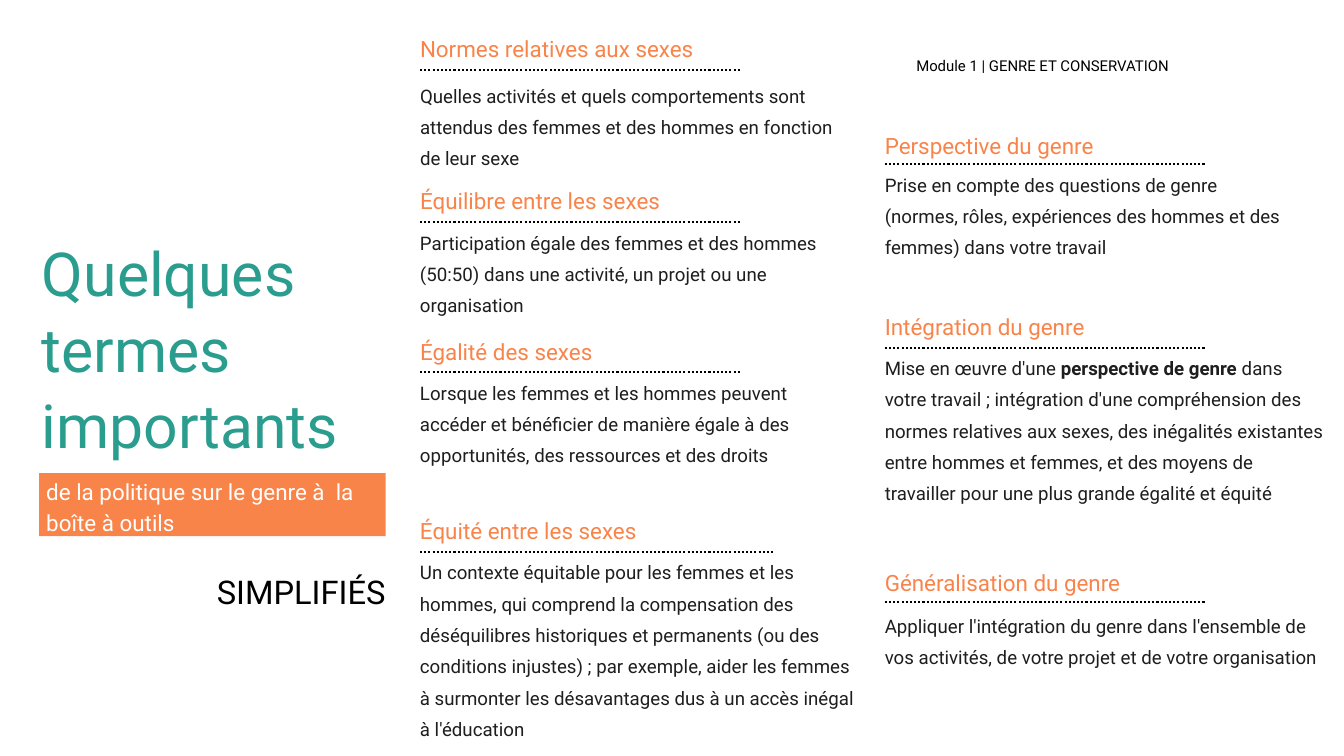
"""Build a slide that defines gender policy terms in two columns."""
from collections import namedtuple
from dataclasses import dataclass

import pptx
import pptx.dml.color
import pptx.enum.dml
import pptx.enum.shapes
import pptx.enum.text
import pptx.oxml.ns
import pptx.util
from lxml import etree

PX = 9525


@dataclass(frozen=True)
class Theme:
    """Hold the colours and type sizes of the slide."""
    font: str = "Roboto"
    teal: str = "2A9D8F"
    coral: str = "F9844A"
    ink: str = "1E1E1E"
    black: str = "000000"
    white: str = "FFFFFF"
    title: int = 65
    tag: int = 35
    head: int = 24
    body: int = 20
    note: int = 16
    rule: float = 2.25
    lead: float = 33.6
    lead_title: float = 81.6
    lead_note: float = 22.4


THEME = Theme()
Term = namedtuple("Term", "name text head head_size rule rule_width body body_size")

COLUMNS = {
    600: [
        Term("Normes relatives aux sexes",
             "Quelles activités et quels comportements sont attendus des femmes "
             "et des hommes en fonction de leur sexe",
             44, (456, 90), 100, 459, 108, (600, 133)),
        Term("Équilibre entre les sexes",
             "Participation égale des femmes et des hommes (50:50) dans une "
             "activité, un projet ou une organisation",
             261, (456, 90), 317, 459, 318, (568, 134)),
        Term("Égalité des sexes",
             "Lorsque les femmes et les hommes peuvent accéder et bénéficier de "
             "manière égale à des opportunités, des ressources et des droits",
             476, (377, 44), 532, 459, 532, (568, 180)),
        Term("Équité entre les sexes",
             "Un contexte équitable pour les femmes et les hommes, qui comprend "
             "la compensation des déséquilibres historiques et permanents (ou des "
             "conditions injustes) ; par exemple, aider les femmes à surmonter "
             "les désavantages dus à un accès inégal à l'éducation",
             732, (414, 44), 788, 505, 789, (624, 271)),
    ],
    1264: [
        Term("Perspective du genre",
             "Prise en compte des questions de genre (normes, rôles, expériences "
             "des hommes et des femmes) dans votre travail",
             183, (377, 44), 234, 459, 235, (568, 133)),
        Term("Intégration du genre",
             "Mise en œuvre d'une *perspective de genre *dans votre travail ; "
             "intégration d'une compréhension des normes relatives aux sexes, des "
             "inégalités existantes entre hommes et femmes, et des moyens de "
             "travailler pour une plus grande égalité et équité",
             441, (377, 44), 497, 459, 497, (632, 271)),
        Term("Généralisation du genre",
             "Appliquer l'intégration du genre dans l'ensemble de vos activités, "
             "de votre projet et de votre organisation",
             807, (568, 44), 860, 459, 865, (624, 133)),
    ],
}


def rgb(code):
    """Turn a hex code into a colour."""
    return pptx.dml.color.RGBColor.from_string(code)


def scale(*sizes):
    """Turn px lengths into EMU."""
    return [size * PX for size in sizes]


def write(shape, text, size, tone, lead=THEME.lead, inset=0, align="LEFT"):
    """Fill a shape with one paragraph, bold between asterisks."""
    frame = shape.text_frame
    frame.word_wrap = True
    frame.auto_size = pptx.enum.text.MSO_AUTO_SIZE.SHAPE_TO_FIT_TEXT
    frame.vertical_anchor = pptx.enum.text.MSO_ANCHOR.TOP
    frame.margin_left = inset * PX
    frame.margin_top = frame.margin_right = frame.margin_bottom = 0
    para = frame.paragraphs[0]
    para.alignment = pptx.enum.text.PP_ALIGN[align]
    para.line_spacing = pptx.util.Pt(lead)
    para.font.name = THEME.font
    para.font.size = pptx.util.Pt(size)
    para.font.color.rgb = rgb(tone)
    for spot, part in enumerate(text.split("*")):
        run = para.add_run()
        run.text = part
        if spot % 2:
            run.font.bold = True


def add_text(slide, box, *args, **style):
    """Add a text box."""
    write(slide.shapes.add_textbox(*scale(*box)), *args, **style)


def add_band(slide, box, text):
    """Add the filled subtitle band."""
    kind = pptx.enum.shapes.MSO_SHAPE.RECTANGLE
    band = slide.shapes.add_shape(kind, *scale(*box))
    band.shadow.inherit = False
    band.fill.solid()
    band.fill.fore_color.rgb = rgb(THEME.coral)
    band.line.fill.background()
    write(band, text, THEME.head, THEME.white, inset=10)


def add_rule(slide, left, top, width):
    """Add a dotted level line."""
    kind = pptx.enum.shapes.MSO_CONNECTOR.STRAIGHT
    rule = slide.shapes.add_connector(kind, *scale(left, top, left + width, top))
    rule.line.color.rgb = rgb(THEME.black)
    rule.line.width = pptx.util.Pt(THEME.rule)
    rule.line.dash_style = pptx.enum.dml.MSO_LINE.ROUND_DOT
    etree.SubElement(rule._element.spPr, pptx.oxml.ns.qn("a:effectLst"))


def add_term(slide, left, term):
    """Add a term with its rule and meaning."""
    add_rule(slide, left, term.rule, term.rule_width)
    add_text(slide, (left, term.body, *term.body_size),
             term.text, THEME.body, THEME.ink)
    add_text(slide, (left, term.head, *term.head_size),
             term.name, THEME.head, THEME.coral)


def main():
    """Build and save the slide."""
    deck = pptx.Presentation()
    deck.slide_width, deck.slide_height = scale(1920, 1080)
    slide = deck.slides.add_slide(deck.slide_layouts[6])
    for left, terms in COLUMNS.items():
        for term in terms:
            add_term(slide, left, term)
    add_text(slide, (56, 828, 495, 48), "SIMPLIFIÉS", THEME.tag, THEME.black,
             inset=10, align="RIGHT")
    add_text(slide, (1309, 76, 581, 29), "Module 1 | GENRE ET CONSERVATION",
             THEME.note, THEME.black, lead=THEME.lead_note)
    add_text(slide, (60, 332, 540, 330), "Quelques termes importants",
             THEME.title, THEME.teal, lead=THEME.lead_title)
    add_band(slide, (56, 676, 495, 90),
             "de la politique sur le genre à  la boîte à outils")
    deck.save("out.pptx")


if __name__ == "__main__":
    main()
